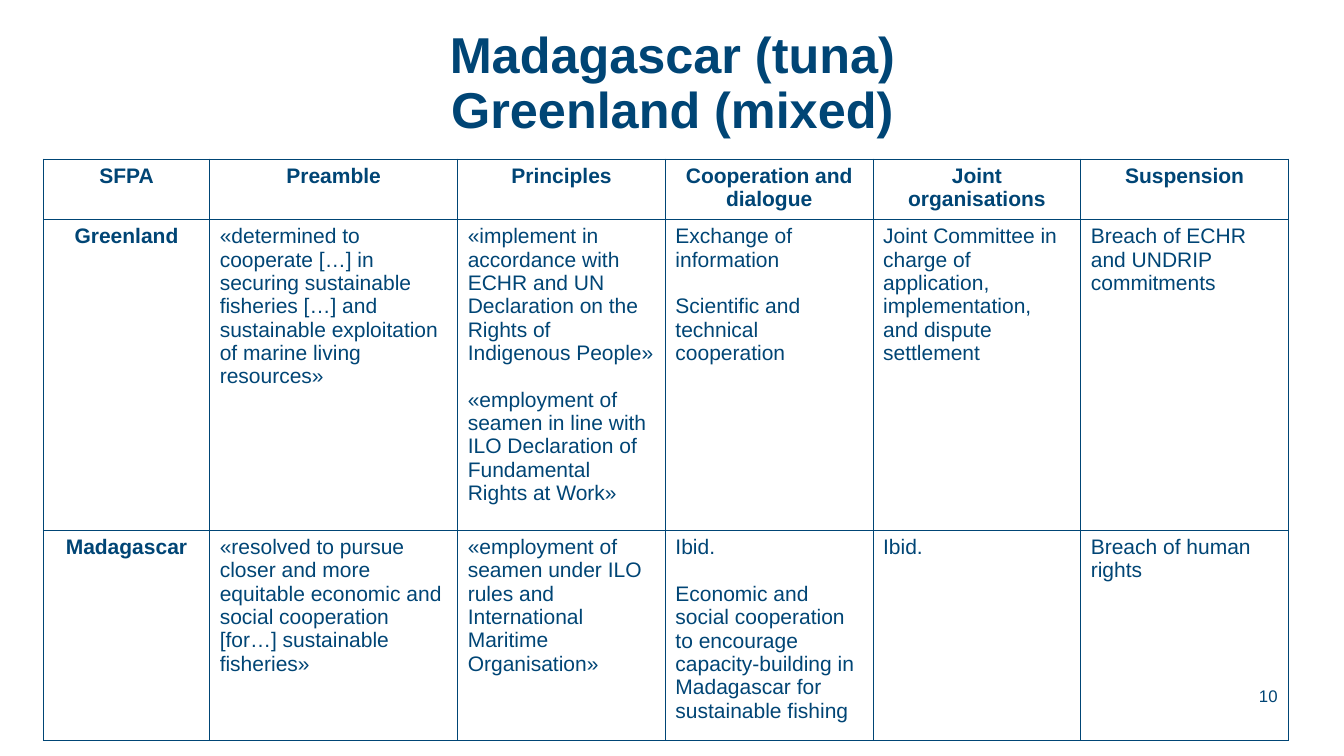
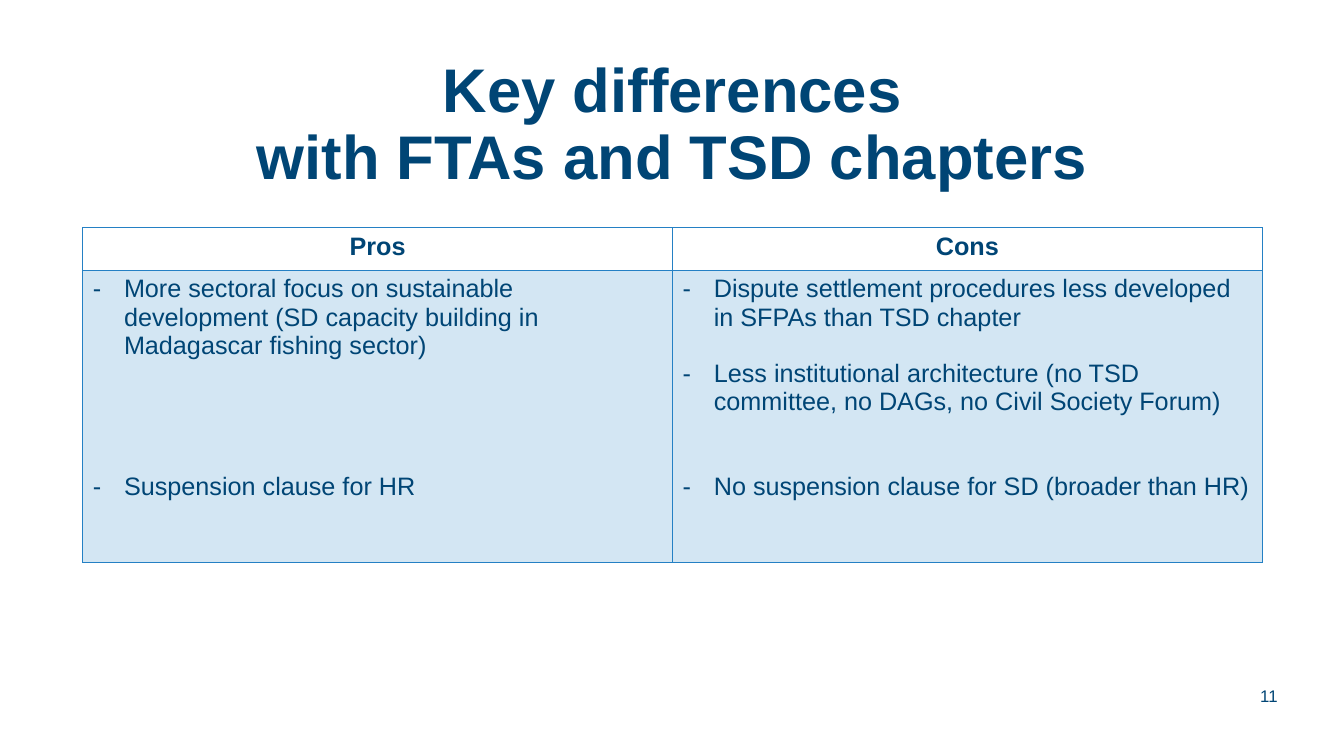
from dataclasses import dataclass

from lxml import etree
from pptx import Presentation
from pptx import util as u
from pptx.dml.color import RGBColor
from pptx.enum import text
from pptx.oxml import ns

PX = u.Inches(1) // 100
LINE = 1.117
CENTER = text.PP_ALIGN.CENTER
LEFT = text.PP_ALIGN.LEFT
RIGHT = text.PP_ALIGN.RIGHT


@dataclass(frozen=True)
class Theme:
    font: str = "Arial"
    navy: str = "004575"
    blue: str = "2480C4"
    pale: str = "D3E6F3"
    small: int = 12
    grid: int = 15
    body: int = 18
    title: int = 36
    big_title: int = 44


@dataclass(frozen=True)
class Item:
    text: str
    gap: int = 0
    bullet: bool = False


def px(n):
    return u.Emu(n * PX)


def assign(obj, values):
    for name, value in values.items():
        setattr(obj, name, value)


class Deck:
    def __init__(self, theme):
        self.theme = theme
        self.prs = Presentation()
        assign(self.prs, {"slide_width": px(1333), "slide_height": px(750)})
        self.s = None

    def slide(self, title, top, size, number):
        self.s = self.prs.slides.add_slide(self.prs.slide_layouts[6])
        self.textbox((82, top, 1170, 145), title, size, CENTER, bold=True, spacing=0.9)
        self.textbox((1228, 665, 49, 40), str(number), self.theme.small, RIGHT,
                     anchor=text.MSO_ANCHOR.BOTTOM)

    def paragraph(self, p, content, size, align, bold=False):
        p.text = content
        p.alignment = align
        for r in p.runs:
            assign(r.font, {"name": self.theme.font, "size": u.Pt(size), "bold": bold})
            r.font.color.rgb = RGBColor.from_string(self.theme.navy)

    def textbox(self, box, content, size, align, bold=False, spacing=1.0,
                anchor=text.MSO_ANCHOR.TOP):
        tf = self.s.shapes.add_textbox(*map(px, box)).text_frame
        assign(tf, {"word_wrap": True, "vertical_anchor": anchor})
        p = tf.paragraphs[0]
        p.line_spacing = spacing
        self.paragraph(p, content, size, align, bold)

    def bullet(self, p):
        ppr = p._p.get_or_add_pPr()
        indent = px(31)
        ppr.set("marL", str(indent))
        ppr.set("indent", str(-indent))
        etree.SubElement(ppr, ns.qn("a:buFont")).set("typeface", self.theme.font)
        etree.SubElement(ppr, ns.qn("a:buChar")).set("char", "-")

    def borders(self, cell, color):
        tcpr = cell._tc.get_or_add_tcPr()
        for i, side in enumerate("LRTB"):
            ln = etree.Element(ns.qn(f"a:ln{side}"), w=str(u.Pt(1)))
            fill = etree.SubElement(ln, ns.qn("a:solidFill"))
            etree.SubElement(fill, ns.qn("a:srgbClr")).set("val", color)
            tcpr.insert(i, ln)

    def cell(self, cell, items, size, heading, line, fill):
        if fill:
            cell.fill.solid()
            cell.fill.fore_color.rgb = RGBColor.from_string(fill)
        else:
            cell.fill.background()
        self.borders(cell, line)
        tf = cell.text_frame
        for i, item in enumerate(items):
            p = tf.add_paragraph() if i else tf.paragraphs[0]
            if item.gap:
                p.space_before = u.Pt(round(item.gap * size * LINE, 1))
            if item.bullet:
                self.bullet(p)
            self.paragraph(p, item.text, size, CENTER if heading else LEFT, heading)

    def table(self, at, widths, heights, rows, size, line, fill=None, row_heads=False):
        table = self.s.shapes.add_table(len(heights), len(widths), *map(px, at),
                                        px(sum(widths)), px(sum(heights))).table
        assign(table, {"first_row": False, "horz_banding": False})
        for column, width in zip(table.columns, widths):
            column.width = px(width)
        for i, (row, height, contents) in enumerate(zip(table.rows, heights, rows)):
            row.height = px(height)
            for j, (cell, content) in enumerate(zip(row.cells, contents)):
                items = [Item(content)] if isinstance(content, str) else content
                heading = i == 0 or (row_heads and j == 0)
                self.cell(cell, items, size, heading, line, fill if i else None)


AGREEMENTS = [
    ["SFPA", "Preamble", "Principles", "Cooperation and dialogue",
     "Joint organisations", "Suspension"],
    ["Greenland",
     "«determined to cooperate […] in securing sustainable fisheries […] and "
     "sustainable exploitation of marine living resources»",
     [Item("«implement in accordance with ECHR and UN Declaration on the Rights "
           "of Indigenous People»"),
      Item("«employment of seamen in line with ILO Declaration of Fundamental "
           "Rights at Work»", 1)],
     [Item("Exchange of information"),
      Item("Scientific and technical cooperation", 1)],
     "Joint Committee in charge of application, implementation, and dispute settlement",
     "Breach of ECHR and UNDRIP commitments"],
    ["Madagascar",
     "«resolved to pursue closer and more equitable economic and social "
     "cooperation [for…] sustainable fisheries»",
     "«employment of seamen under ILO rules and International Maritime Organisation»",
     [Item("Ibid."),
      Item("Economic and social cooperation to encourage capacity-building in "
           "Madagascar for sustainable fishing", 1)],
     "Ibid.",
     "Breach of human rights"],
]

PROS_CONS = [
    ["Pros", "Cons"],
    [[Item("More sectoral focus on sustainable development (SD capacity building "
           "in Madagascar fishing sector)", 0, True),
      Item("Suspension clause for HR", 4, True)],
     [Item("Dispute settlement procedures less developed in SFPAs than TSD chapter",
           0, True),
      Item("Less institutional architecture (no TSD committee, no DAGs, no Civil "
           "Society Forum)", 1, True),
      Item("No suspension clause for SD (broader than HR)", 2, True)]],
]


def main():
    theme = Theme()
    deck = Deck(theme)

    deck.slide("Madagascar (tuna)\vGreenland (mixed)", 25, theme.title, 10)
    deck.table((43, 158), [165, 246] + [206] * 4, [60, 288, 195], AGREEMENTS,
               theme.grid, theme.navy, row_heads=True)

    deck.slide("Key differences\vwith FTAs and TSD chapters", 54, theme.big_title, 11)
    deck.table((82, 226), [585] * 2, [42, 290], PROS_CONS,
               theme.body, theme.blue, theme.pale)

    deck.prs.save("out.pptx")


if __name__ == "__main__":
    main()
